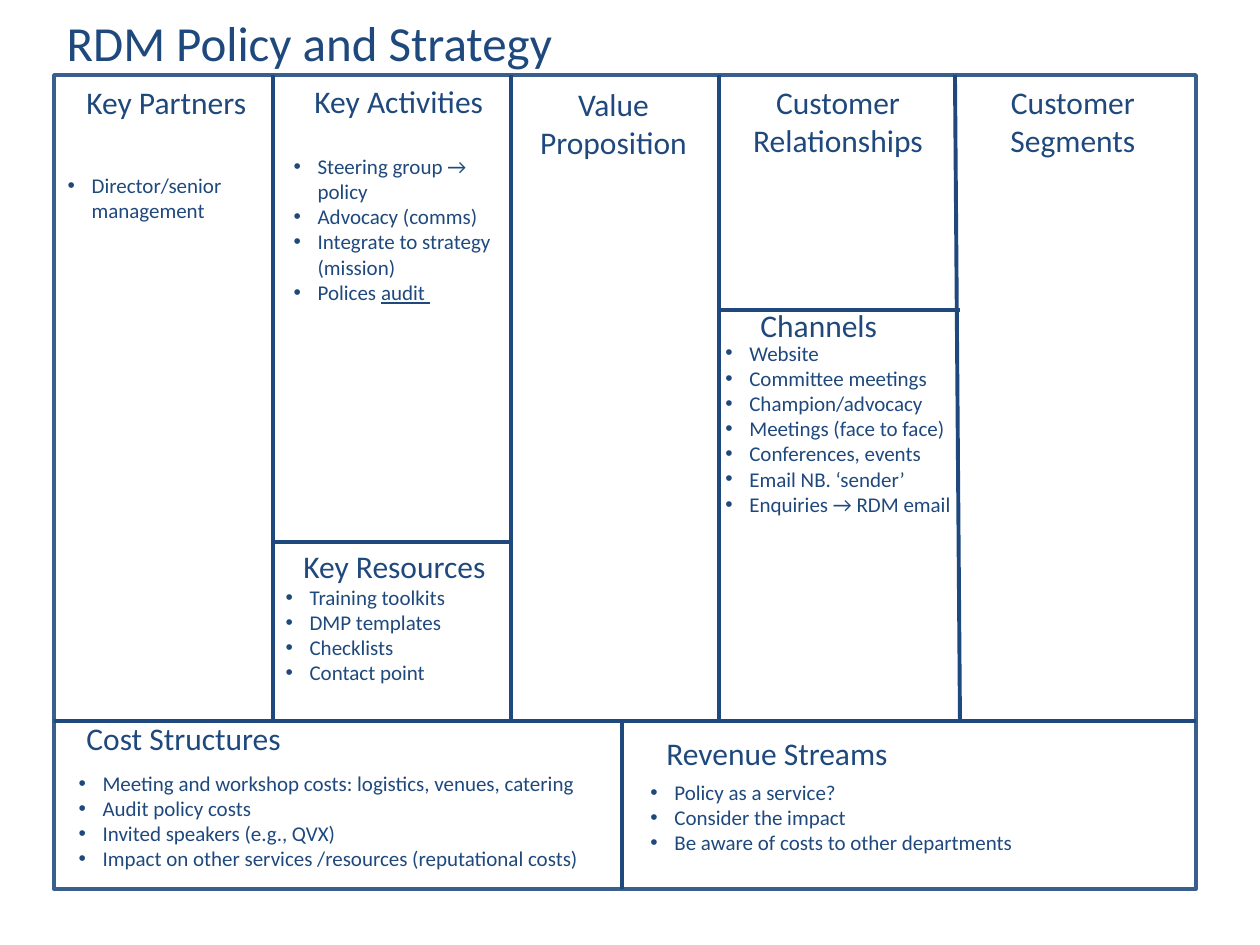
import pptx
import pptx.util
import pptx.dml.color
import pptx.enum.shapes
import pptx.enum.text
import pptx.oxml
import pptx.oxml.ns
import lxml.etree

NAVY = pptx.dml.color.RGBColor(0x1F, 0x49, 0x7D)
STEEL = pptx.dml.color.RGBColor(0x3A, 0x5F, 0x8C)
FONT = "Calibri"
PX_PER_INCH = 126
INDENT = 24
LEFT = pptx.enum.text.PP_ALIGN.LEFT
CENTER = pptx.enum.text.PP_ALIGN.CENTER

FRAME = (54, 75, 1142, 814)
TOP, FOOT, BOTTOM = 75, 721, 889
PARTNERS_END, ACTIVITIES_END, VALUE_END, MIDDLE = 273, 511, 719, 622

DIVIDERS = [
    (PARTNERS_END, TOP, PARTNERS_END, FOOT),
    (955, TOP, 960, FOOT),
    (ACTIVITIES_END, TOP, ACTIVITIES_END, FOOT),
    (VALUE_END, TOP, VALUE_END, FOOT),
    (PARTNERS_END, 542, ACTIVITIES_END, 542),
    (VALUE_END - 2, 310, 960, 310),
    (54, FOOT, 1196, FOOT),
    (MIDDLE, FOOT, MIDDLE, BOTTOM),
]

# text, box, whether it wraps and is centred
HEADINGS = [
    ("Key Partners", (74, 77, 186, 50), False),
    ("Key Activities", (302, 76, 197, 50), False),
    ("Value Proposition", (517, 79, 193, 89), True),
    ("Customer Relationships", (729, 77, 218, 89), True),
    ("Customer Segments", (965, 77, 216, 89), True),
    ("Key Resources", (291, 541, 209, 50), False),
    ("Channels", (748, 300, 144, 50), False),
    ("Cost Structures", (74, 713, 222, 50), False),
    ("Revenue Streams", (654, 728, 249, 50), False),
]

# box, items; an item is a text or a pair of plain and underlined text
LISTS = [
    ((55, 166, 218, 115), ["Director/senior management"]),
    ((281, 147, 231, 267), [
        "Steering group → policy", "Advocacy (comms)",
        "Integrate to strategy (mission)", ("Polices ", "audit ")]),
    ((273, 578, 251, 115), [
        "Training toolkits", "DMP templates", "Checklists", "Contact point"]),
    ((66, 764, 547, 115), [
        "Meeting and workshop costs: logistics, venues, catering",
        "Audit policy costs", "Invited speakers (e.g., QVX)",
        "Impact on other services /resources (reputational costs)"]),
    ((713, 334, 251, 242), [
        "Website", "Committee meetings", "Champion/advocacy",
        "Meetings (face to face)", "Conferences, events",
        "Email NB. ‘sender’", "Enquiries → RDM email"]),
    ((638, 773, 547, 89), [
        "Policy as a service?", "Consider the impact",
        "Be aware of costs to other departments"]),
]


def px(n):
    return pptx.util.Emu(round(n * 914400 / PX_PER_INCH))


def place(sp, box):
    sp.left, sp.top, sp.width, sp.height = map(px, box)


def prepare_frame(sp, wrap):
    tf = sp.text_frame
    tf.auto_size = pptx.enum.text.MSO_AUTO_SIZE.NONE
    tf.word_wrap = wrap
    tf.vertical_anchor = pptx.enum.text.MSO_ANCHOR.TOP
    return tf


def add_run(p, text, size, underline=None):
    r = p.add_run()
    r.text = text
    r.font.name = FONT
    r.font.size = pptx.util.Pt(size)
    r.font.bold = False
    r.font.underline = underline
    r.font.color.rgb = NAVY


def fill_line(sp, text, size, centred):
    """Write one heading into a shape."""
    p = prepare_frame(sp, centred).paragraphs[0]
    p.alignment = CENTER if centred else LEFT
    add_run(p, text, size)


def add_bullet(p):
    pPr = p._p.get_or_add_pPr()
    pPr.set("marL", str(px(INDENT)))
    pPr.set("indent", str(-px(INDENT)))
    font = lxml.etree.SubElement(pPr, pptx.oxml.ns.qn("a:buFont"))
    font.set("typeface", "Arial")
    char = lxml.etree.SubElement(pPr, pptx.oxml.ns.qn("a:buChar"))
    char.set("char", "•")


def fill_list(sp, items):
    tf = prepare_frame(sp, True)
    for i, item in enumerate(items):
        p = tf.add_paragraph() if i else tf.paragraphs[0]
        p.alignment = LEFT
        p.space_before = pptx.util.Pt(0)
        add_bullet(p)
        plain, underlined = (item, "") if isinstance(item, str) else item
        add_run(p, plain, 12)
        if underlined:
            add_run(p, underlined, 12, True)


def add_frame(s):
    sp = s.shapes.add_shape(
        pptx.enum.shapes.MSO_SHAPE.RECTANGLE, *map(px, FRAME))
    sp.shadow.inherit = False
    sp.fill.background()
    sp.line.color.rgb = STEEL
    sp.line.width = pptx.util.Pt(2)


def add_divider(s, ends):
    line = s.shapes.add_connector(
        pptx.enum.shapes.MSO_CONNECTOR.STRAIGHT, *map(px, ends))
    line.line.color.rgb = NAVY
    line.line.width = pptx.util.Pt(2.25)
    lxml.etree.SubElement(
        line._element.spPr, pptx.oxml.ns.qn("a:effectLst"))


def main():
    prs = pptx.Presentation()
    prs.slide_width, prs.slide_height = px(1260), px(945)
    s = prs.slides.add_slide(prs.slide_layouts.get_by_name("Comparison"))
    bodies = [sp for sp in s.placeholders if sp.placeholder_format.idx]

    add_frame(s)
    for ends in DIVIDERS:
        add_divider(s, ends)

    title = s.shapes.title
    place(title, (54, 6, 517, 72))
    fill_line(title, "RDM Policy and Strategy", 28, False)
    for text, box, centred in HEADINGS:
        sp = s.shapes.add_textbox(*map(px, box))
        fill_line(sp, text, 18, centred)

    # The layout has four body placeholders; further lists get text boxes.
    for box, items in LISTS:
        sp = bodies.pop(0) if bodies else s.shapes.add_textbox(0, 0, 0, 0)
        place(sp, box)
        fill_list(sp, items)

    prs.save("out.pptx")


if __name__ == "__main__":
    main()
